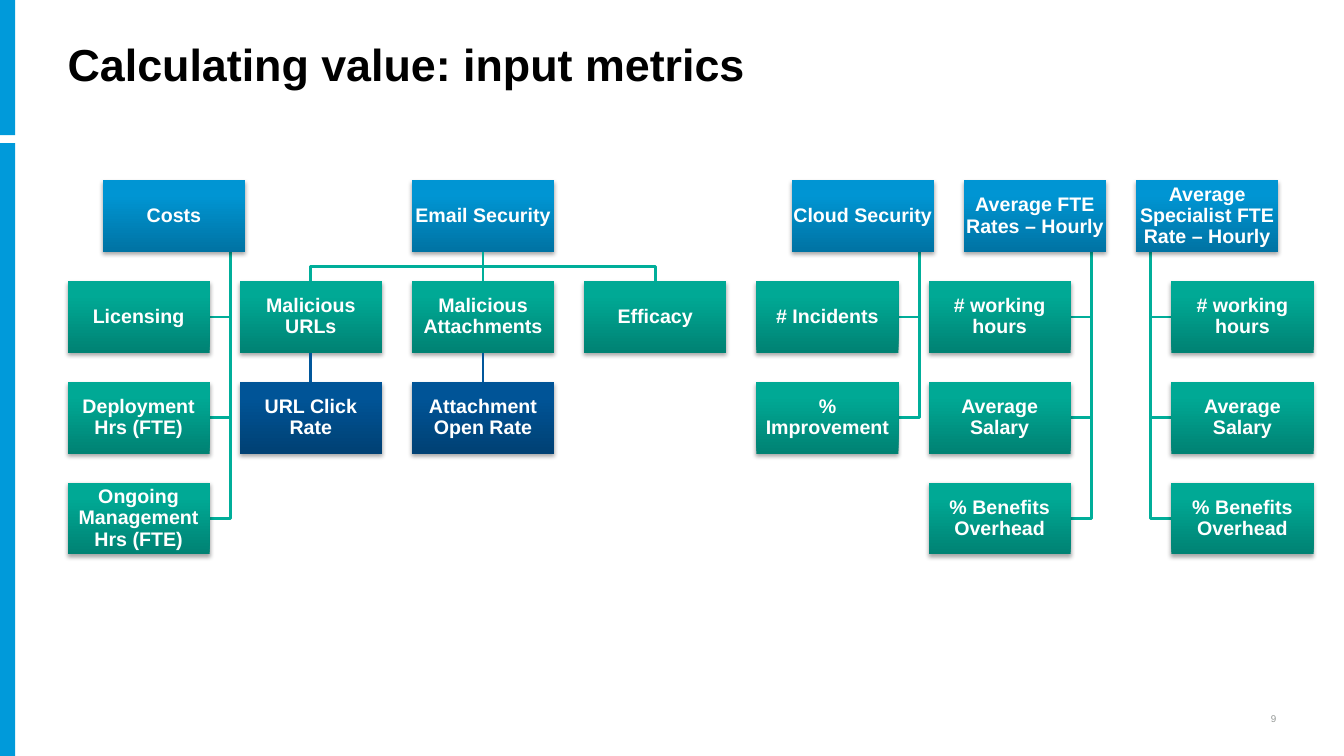
import lxml.etree
import pptx
import pptx.dml.color
import pptx.enum.shapes
import pptx.enum.text
import pptx.oxml.ns
import pptx.util

Inches = pptx.util.Inches
RGBColor = pptx.dml.color.RGBColor
Align = pptx.enum.text.PP_ALIGN
Anchor = pptx.enum.text.MSO_ANCHOR
Preset = pptx.enum.shapes.MSO_SHAPE
qn = pptx.oxml.ns.qn

BLACK = RGBColor(0x00, 0x00, 0x00)
WHITE = RGBColor(0xFF, 0xFF, 0xFF)
GRAY = RGBColor(0x94, 0x98, 0x96)
SKY = RGBColor(0x00, 0x9A, 0xDA)
TEAL = RGBColor(0x00, 0xAE, 0x9A)
NAVY = RGBColor(0x01, 0x57, 0x9B)

# Gradient colours from bottom to top of a box
HEAD_FILL = (RGBColor(0x00, 0x73, 0xA3), RGBColor(0x00, 0x95, 0xD3), RGBColor(0x00, 0x96, 0xD4))
METRIC_FILL = (RGBColor(0x00, 0x82, 0x73), RGBColor(0x00, 0xA9, 0x95), RGBColor(0x00, 0xA9, 0x96))
RATE_FILL = (RGBColor(0x00, 0x41, 0x74), RGBColor(0x00, 0x54, 0x97), RGBColor(0x00, 0x55, 0x98))
STOPS = (0, 80, 100)

# Grid of boxes, in inches
LEFT, TOP = 0.67, 1.79
WIDTH, HEIGHT = 1.41, 0.71
COLUMN_STEP, ROW_STEP = 8.54 / 5, 1.0
INDENT = 0.35
HANG = 0.9 * WIDTH

# Heading, column, side on which the metrics hang, metrics
HANGING_GROUPS = (
    ("Costs", 0, "left", ("Licensing", "Deployment Hrs (FTE)", "Ongoing Management Hrs (FTE)")),
    ("Cloud Security", 4, "left", ("# Incidents", "% Improvement")),
    ("Average FTE Rates – Hourly", 5, "left",
     ("# working hours", "Average Salary", "% Benefits Overhead")),
    ("Average Specialist FTE Rate – Hourly", 6, "right",
     ("# working hours", "Average Salary", "% Benefits Overhead")),
)
# Metric under Email Security, column, rate below it
EMAIL_METRICS = (
    ("Malicious URLs", 1, "URL Click Rate"),
    ("Malicious Attachments", 2, "Attachment Open Rate"),
    ("Efficacy", 3, None),
)


def column_left(column):
    return LEFT + column * COLUMN_STEP


def row_top(row):
    return TOP + row * ROW_STEP


def write_text(shape, text, size=14, color=WHITE, bold=True, align=Align.CENTER,
               inset=0.01, spacing=0.9, wrap=True):
    frame = shape.text_frame
    frame.word_wrap = wrap
    frame.vertical_anchor = Anchor.MIDDLE
    frame.margin_left = frame.margin_right = Inches(inset)
    frame.margin_top = frame.margin_bottom = Inches(inset)
    para = frame.paragraphs[0]
    para.alignment = align
    para.line_spacing = spacing
    span = para.add_run()
    span.text = text
    span.font.name = "Arial"
    span.font.size = pptx.util.Pt(size)
    span.font.bold = bold
    span.font.color.rgb = color


class SlideBuilder:
    line_width = pptx.util.Pt(2)

    def __init__(self, page):
        self.page = page
        self.shapes = page.shapes

    def title(self, text):
        title = self.shapes.title
        title.left, title.top = Inches(0.67), Inches(0)
        title.width, title.height = Inches(12), Inches(1.33)
        write_text(title, text, size=32, color=BLACK, align=Align.LEFT, inset=0)

    def bar(self, top, height):
        bar = self.shapes.add_shape(Preset.RECTANGLE, Inches(0), Inches(top),
                                    Inches(0.15), Inches(height))
        bar.shadow.inherit = False
        bar.fill.solid()
        bar.fill.fore_color.rgb = SKY
        bar.line.fill.background()

    def box(self, text, left, row, colors):
        box = self.shapes.add_shape(Preset.RECTANGLE, Inches(left), Inches(row_top(row)),
                                    Inches(WIDTH), Inches(HEIGHT))
        box.line.fill.background()
        box.fill.gradient()
        box.fill.gradient_angle = 90
        properties = box._element.spPr
        stop_list = properties.find(qn("a:gradFill")).find(qn("a:gsLst"))
        for stop in list(stop_list):
            stop_list.remove(stop)
        for position, color in zip(STOPS, colors):
            stop = lxml.etree.SubElement(stop_list, qn("a:gs"), pos=str(position * 1000))
            lxml.etree.SubElement(stop, qn("a:srgbClr"), val=str(color))
        # Soft shadow straight below
        box.shadow.inherit = False
        shadow = lxml.etree.SubElement(properties.find(qn("a:effectLst")), qn("a:outerShdw"),
                                       blurRad="40000", dist="23000", dir="5400000",
                                       rotWithShape="0")
        black = lxml.etree.SubElement(shadow, qn("a:srgbClr"), val=str(BLACK))
        lxml.etree.SubElement(black, qn("a:alpha"), val="35000")
        write_text(box, text)
        return box

    def bent_line(self, points):
        corners = [(Inches(x), Inches(y)) for x, y in points]
        builder = self.shapes.build_freeform(*corners[0], scale=1.0)
        builder.add_line_segments(corners[1:], close=False)
        line = builder.convert_to_shape()
        line.shadow.inherit = False
        line.fill.background()
        line.line.color.rgb = TEAL
        line.line.width = self.line_width

    def join_down(self, upper, lower, color):
        line = self.shapes.add_connector(pptx.enum.shapes.MSO_CONNECTOR.STRAIGHT, 0, 0, 0, 0)
        line.begin_connect(upper, 2)
        line.end_connect(lower, 0)
        line.line.color.rgb = color
        line.line.width = self.line_width
        lxml.etree.SubElement(line._element.spPr, qn("a:effectLst"))

    def hanging_group(self, heading, column, side, metrics):
        head_left = column_left(column) + INDENT
        if side == "left":
            metric_left = head_left - INDENT
            stem, edge = head_left + HANG, metric_left + WIDTH
        else:
            metric_left = head_left + INDENT
            stem, edge = head_left + WIDTH - HANG, metric_left
        for row, _ in enumerate(metrics, 1):
            middle = row_top(row) + HEIGHT / 2
            self.bent_line([(stem, TOP + HEIGHT), (stem, middle), (edge, middle)])
        self.box(heading, head_left, 0, HEAD_FILL)
        for row, metric in enumerate(metrics, 1):
            self.box(metric, metric_left, row, METRIC_FILL)

    def email_group(self, heading, head_column, metrics):
        head_left = column_left(head_column)
        head = self.box(heading, head_left, 0, HEAD_FILL)
        center, bottom = head_left + WIDTH / 2, TOP + HEIGHT
        fork = (bottom + row_top(1)) / 2
        for text, column, rate in metrics:
            left = column_left(column)
            metric = self.box(text, left, 1, METRIC_FILL)
            if column == head_column:
                self.join_down(head, metric, TEAL)
            else:
                target = left + WIDTH / 2
                self.bent_line([(center, bottom), (center, fork),
                                (target, fork), (target, row_top(1))])
            if rate:
                self.join_down(metric, self.box(rate, left, 2, RATE_FILL), NAVY)

    def page_number(self, text):
        box = self.shapes.add_textbox(Inches(12.33), Inches(7.01), Inches(0.33), Inches(0.24))
        write_text(box, text, size=7, color=GRAY, bold=False, align=Align.RIGHT,
                   inset=0, spacing=1.0, wrap=False)


def main():
    deck = pptx.Presentation()
    deck.slide_width, deck.slide_height = Inches(13.33), Inches(7.5)
    builder = SlideBuilder(deck.slides.add_slide(deck.slide_layouts[5]))

    # Side bars and title
    builder.bar(1.42, 6.08)
    builder.bar(0, 1.34)
    builder.title("Calculating value: input metrics")

    # Metric trees
    for group in HANGING_GROUPS:
        builder.hanging_group(*group)
    builder.email_group("Email Security", 2, EMAIL_METRICS)

    builder.page_number("9")
    deck.save("out.pptx")


if __name__ == "__main__":
    main()
